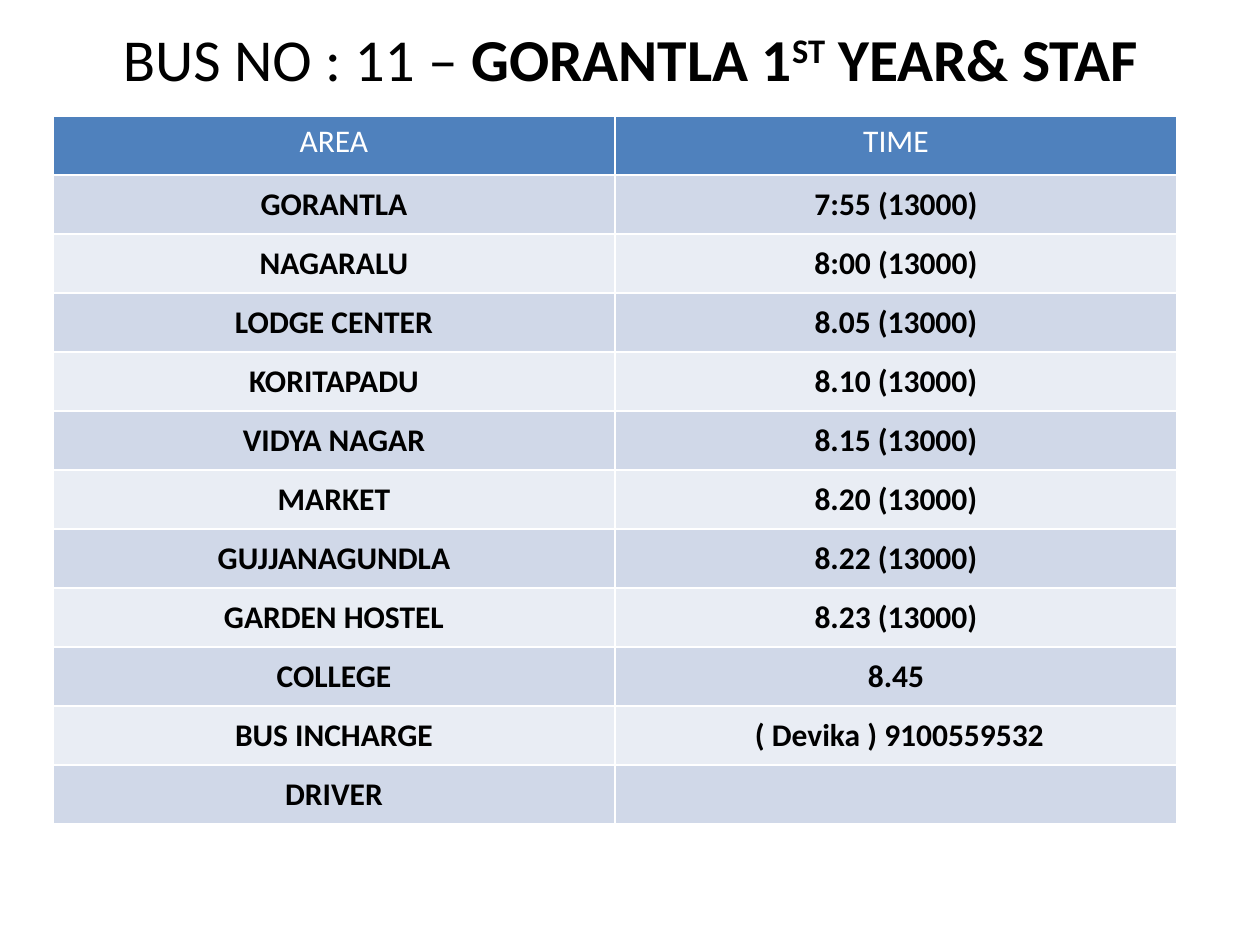
"""Build a bus timetable slide with a title and a two-column table."""
import pptx
import pptx.dml.color
import pptx.enum.text
import pptx.util

BLACK = pptx.dml.color.RGBColor(0x00, 0x00, 0x00)
WHITE = pptx.dml.color.RGBColor(0xFF, 0xFF, 0xFF)
HEADER_BLUE = pptx.dml.color.RGBColor(0x4F, 0x81, 0xBD)
BAND_DARK = pptx.dml.color.RGBColor(0xD0, 0xD8, 0xE8)
BAND_LIGHT = pptx.dml.color.RGBColor(0xE9, 0xED, 0xF4)

ROW_HEIGHT = 59
COLUMN_WIDTH = 562
TIMETABLE = [
    ("AREA", "TIME"),
    ("GORANTLA", "7:55 (13000)"),
    ("NAGARALU", "8:00 (13000)"),
    ("LODGE CENTER", "8.05 (13000)"),
    ("KORITAPADU", "8.10 (13000)"),
    ("VIDYA NAGAR", "8.15 (13000)"),
    ("MARKET", "8.20 (13000)"),
    ("GUJJANAGUNDLA", "8.22 (13000)"),
    ("GARDEN HOSTEL", "8.23 (13000)"),
    ("COLLEGE", "8.45"),
    ("BUS INCHARGE", " ( Devika ) 9100559532"),
    ("DRIVER", ""),
]


def px(length):
    return pptx.util.Emu(round(length * 914400 / 126))


def style_paragraph(paragraph, size, color):
    paragraph.alignment = pptx.enum.text.PP_ALIGN.CENTER
    paragraph.font.name = "Calibri"
    paragraph.font.size = pptx.util.Pt(size)
    paragraph.font.color.rgb = color


presentation = pptx.Presentation()
presentation.slide_width = px(1260)
presentation.slide_height = px(945)
slide = presentation.slides.add_slide(presentation.slide_layouts[5])

title = slide.shapes.title
title.left, title.top, title.width, title.height = px(95), px(0), px(1071), px(116)
title.text_frame.vertical_anchor = pptx.enum.text.MSO_ANCHOR.MIDDLE
paragraph = title.text_frame.paragraphs[0]
style_paragraph(paragraph, 34, BLACK)
for text, bold, baseline in [
    ("BUS NO : 11 –", False, 0),
    (" GORANTLA 1", True, 0),
    ("ST", True, 30000),
    (" YEAR& STAF", True, 0),
]:
    run = paragraph.add_run()
    run.text = text
    run.font.bold = bold
    if baseline:
        run.font._element.set("baseline", str(baseline))

table = slide.shapes.add_table(
    len(TIMETABLE), 2, px(53), px(116), px(2 * COLUMN_WIDTH), px(len(TIMETABLE) * ROW_HEIGHT)
).table
for column in table.columns:
    column.width = px(COLUMN_WIDTH)

for row_index, texts in enumerate(TIMETABLE):
    is_header = row_index == 0
    band = BAND_DARK if row_index % 2 else BAND_LIGHT
    table.rows[row_index].height = px(ROW_HEIGHT)
    for column_index, text in enumerate(texts):
        cell = table.cell(row_index, column_index)
        cell.fill.solid()
        cell.fill.fore_color.rgb = HEADER_BLUE if is_header else band
        cell.text = text
        paragraph = cell.text_frame.paragraphs[0]
        style_paragraph(paragraph, 18, WHITE if is_header else BLACK)
        paragraph.font.bold = not is_header
        if not is_header:
            cell.vertical_anchor = pptx.enum.text.MSO_ANCHOR.MIDDLE
            cell.margin_left = cell.margin_top = cell.margin_right = px(1)
            cell.margin_bottom = 0

presentation.save("out.pptx")
